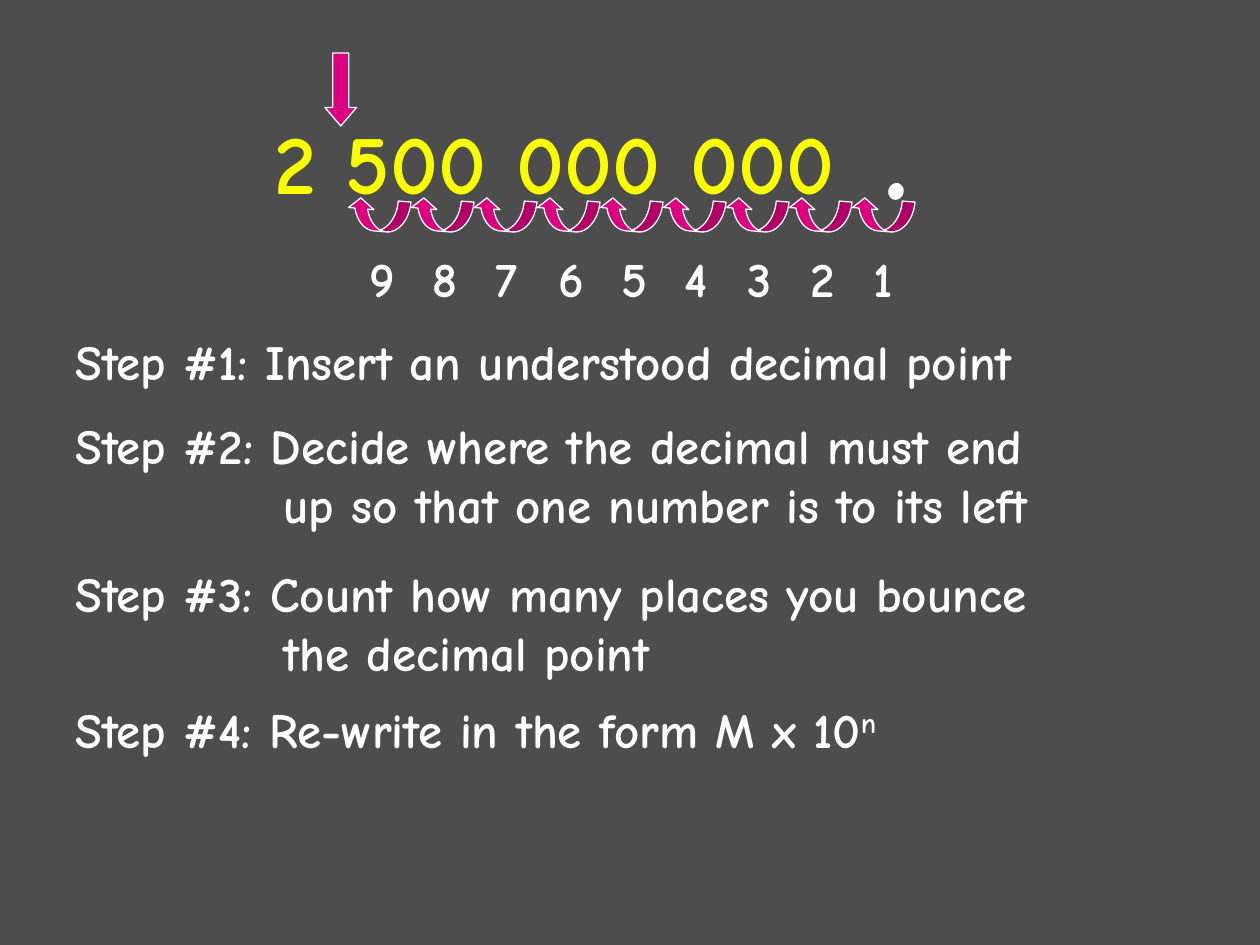
import pptx
import pptx.util
import pptx.dml.color
import pptx.enum.shapes
import pptx.enum.text

Cm = pptx.util.Cm
Pt = pptx.util.Pt
shape_types = pptx.enum.shapes.MSO_SHAPE


def color(value):
    return pptx.dml.color.RGBColor.from_string(value)


def add_text(left, top, width, height, text, size=28, text_color="FFFFFF"):
    box = slide.shapes.add_textbox(Cm(left), Cm(top), Cm(width), Cm(height))
    text_frame = box.text_frame
    text_frame.word_wrap = True
    text_frame.auto_size = pptx.enum.text.MSO_AUTO_SIZE.SHAPE_TO_FIT_TEXT
    text_frame.text = text
    for paragraph in text_frame.paragraphs:
        for run in paragraph.runs:
            run.font.name = "Comic Neue"
            run.font.size = Pt(size)
            run.font.bold = True
            run.font.color.rgb = color(text_color)
    return text_frame


presentation = pptx.Presentation()
presentation.slide_width = Cm(25.4)
presentation.slide_height = Cm(19.05)
slide = presentation.slides.add_slide(presentation.slide_layouts[6])
slide.background.fill.solid()
slide.background.fill.fore_color.rgb = color("4D4D4D")

add_text(5.28, 2.11, 15.29, 2.29, "2 500 000 000", 48, "FAFD00")
add_text(17.58, 1.07, 1.7, 3.63, ".", 80)

target = slide.shapes.add_shape(shape_types.DOWN_ARROW, Cm(6.55), Cm(1.07), Cm(0.64), Cm(1.47))
target.adjustments[0] = 0.5
target.adjustments[1] = 0.583
arrows = [target]

places = 9
spacing = 1.27
for index in range(places):
    offset = index * spacing
    bounce = slide.shapes.add_shape(
        shape_types.CURVED_DOWN_ARROW, Cm(6.99 + offset), Cm(4.02), Cm(spacing), Cm(0.64)
    )
    bounce.rotation = 184.8
    for position, value in enumerate((0.4, 0.8, 0.333)):
        bounce.adjustments[position] = value
    arrows.append(bounce)
    add_text(7.19 + offset, 4.88, 1.07, 1.45, str(places - index))

for arrow in arrows:
    arrow.shadow.inherit = False
    arrow.fill.solid()
    arrow.fill.fore_color.rgb = color("DC0081")
    arrow.line.color.rgb = color("FFFFFF")
    arrow.line.width = Pt(0.75)

steps = [
    (6.55, 1.45, "Step #1: Insert an understood decimal point"),
    (8.26, 2.62, "Step #2: Decide where the decimal must end\nup so that one number is to its left"),
    (11.23, 2.62, "Step #3: Count how many places you bounce\nthe decimal point"),
    (13.97, 1.45, "Step #4: Re-write in the form M x 10"),
]
for top, height, text in steps:
    text_frame = add_text(1.27, top, 23.06, height, text)
    for paragraph in text_frame.paragraphs[1:]:
        paragraph._p.get_or_add_pPr().set("marL", str(Cm(4.2)))

exponent = text_frame.paragraphs[0].add_run()
exponent.text = "n"
exponent.font.name = "Comic Neue"
exponent.font.size = Pt(28)
exponent.font.bold = True
exponent.font.color.rgb = color("FFFFFF")
exponent._r.get_or_add_rPr().set("baseline", "30000")

presentation.save("out.pptx")
